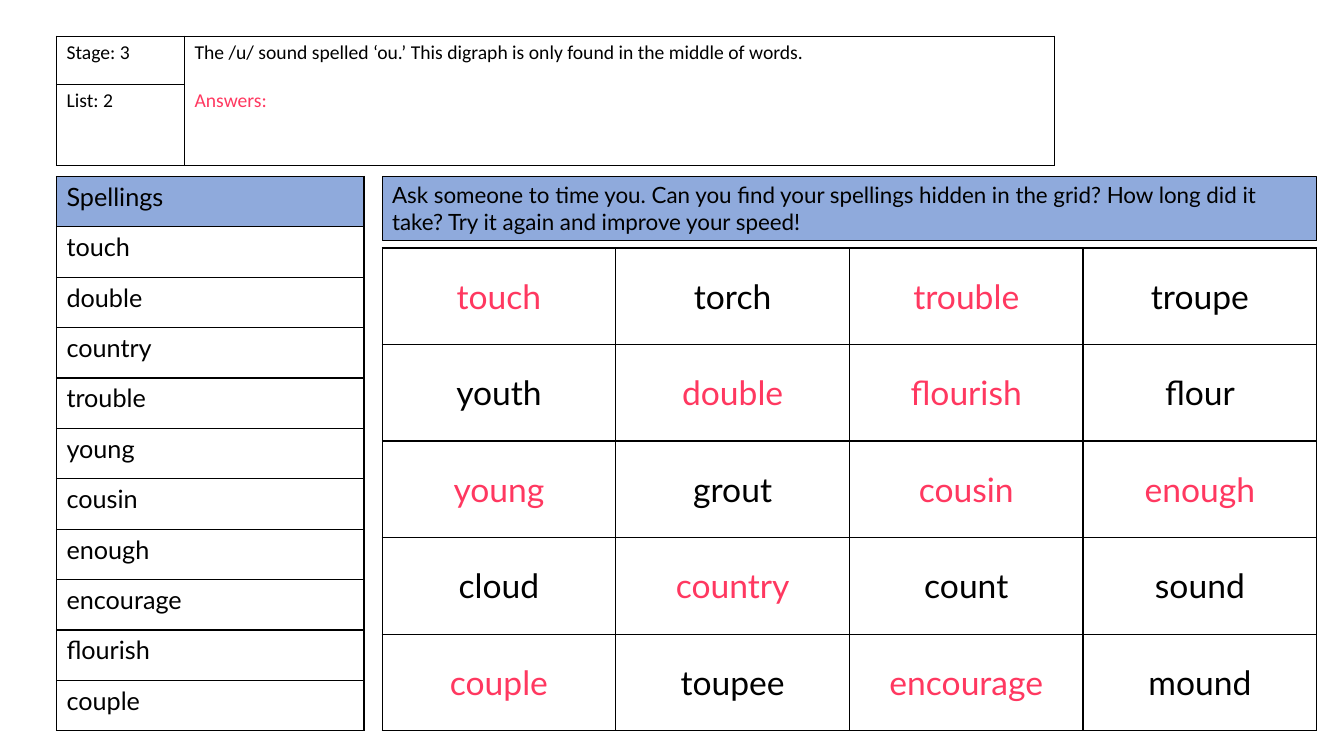
import pptx
import pptx.dml.color
import pptx.enum.shapes
import pptx.enum.text
import pptx.util
from lxml import etree
from pptx.oxml.ns import qn

BLACK = pptx.dml.color.RGBColor(0x00, 0x00, 0x00)
ANSWER = pptx.dml.color.RGBColor(0xFF, 0x38, 0x60)
HEADING = pptx.dml.color.RGBColor(0x8F, 0xAA, 0xDC)

STAGE, LIST = "Stage: 3", "List: 2"
RULE = "The /u/ sound spelled ‘ou.’ This digraph is only found in the middle of words."
TASK = ("Ask someone to time you. Can you find your spellings hidden in the grid? "
        "How long did it take? Try it again and improve your speed!")
SPELLINGS = ["touch", "double", "country", "trouble", "young", "cousin",
             "enough", "encourage", "flourish", "couple"]
GRID = [
    ["touch", "torch", "trouble", "troupe"],
    ["youth", "double", "flourish", "flour"],
    ["young", "grout", "cousin", "enough"],
    ["cloud", "country", "count", "sound"],
    ["couple", "toupee", "encourage", "mound"],
]

# Page grid, in inches
LEFT, TOP = 0.56, 0.36
BODY_TOP, BODY_H = 1.75, 5.5
LIST_W = 3.05
GRID_LEFT, GRID_W, GRID_H = 3.79, 9.27, 4.79
TASK_H = 0.64
HEADER_COLS, HEADER_H = [1.27, 8.63], 0.95

inch = pptx.util.Inches


def write(tf, text, size=18, font="Lato", color=BLACK, align=None, before=None, new=False):
    """Write text in the first paragraph of tf, or in a new one."""
    p = tf.add_paragraph() if new else tf.paragraphs[0]
    if align is not None:
        p.alignment = align
    if before is not None:
        p.space_before = pptx.util.Pt(before)
    r = p.add_run()
    r.text = text
    r.font.size = pptx.util.Pt(size)
    r.font.name = font
    r.font.color.rgb = color


def add_border(cell):
    tcPr = cell._tc.get_or_add_tcPr()
    for side in ("lnL", "lnR", "lnT", "lnB"):
        ln = etree.SubElement(tcPr, qn("a:" + side), w=str(pptx.util.Pt(1)))
        fill = etree.SubElement(ln, qn("a:solidFill"))
        etree.SubElement(fill, qn("a:srgbClr"), val=str(BLACK))


def add_table(slide, left, top, cols, rows, height):
    """Add a plain bordered table with the given column widths and equal rows."""
    table = slide.shapes.add_table(rows, len(cols), inch(left), inch(top),
                                   inch(sum(cols)), inch(height)).table
    table.first_row = table.horz_banding = False
    for column, width in zip(table.columns, cols):
        column.width = inch(width)
    for row in table.rows:
        row.height = inch(height / rows)
    for cell in table.iter_cells():
        add_border(cell)
        cell.fill.background()
    return table


def add_header(slide):
    table = add_table(slide, LEFT, TOP, HEADER_COLS, 2, HEADER_H)
    rule = table.cell(0, 1)
    rule.merge(table.cell(1, 1))
    style = dict(size=14, font="Calibri")
    write(table.cell(0, 0).text_frame, STAGE, **style)
    write(table.cell(1, 0).text_frame, LIST, **style)
    write(rule.text_frame, RULE, **style)
    write(rule.text_frame, "Answers:", color=ANSWER, before=17, new=True, **style)


def add_spellings(slide):
    lines = ["Spellings"] + SPELLINGS
    table = add_table(slide, LEFT, BODY_TOP, [LIST_W], len(lines), BODY_H)
    for cell, text in zip(table.iter_cells(), lines):
        write(cell.text_frame, text)
    heading = table.cell(0, 0)
    heading.fill.solid()
    heading.fill.fore_color.rgb = HEADING


def add_word_grid(slide):
    n = len(GRID[0])
    table = add_table(slide, GRID_LEFT, BODY_TOP + BODY_H - GRID_H,
                      [GRID_W / n] * n, len(GRID), GRID_H)
    for cell, word in zip(table.iter_cells(), sum(GRID, [])):
        cell.vertical_anchor = pptx.enum.text.MSO_ANCHOR.MIDDLE
        write(cell.text_frame, word, size=24, align=pptx.enum.text.PP_ALIGN.CENTER,
              color=ANSWER if word in SPELLINGS else BLACK)


def add_task(slide):
    sp = slide.shapes.add_shape(pptx.enum.shapes.MSO_SHAPE.RECTANGLE, inch(GRID_LEFT),
                                inch(BODY_TOP), inch(GRID_W), inch(TASK_H))
    sp.shadow.inherit = False
    sp.fill.solid()
    sp.fill.fore_color.rgb = HEADING
    sp.line.color.rgb = BLACK
    sp.line.width = pptx.util.Pt(0.75)
    tf = sp.text_frame
    tf.word_wrap = True
    tf.auto_size = pptx.enum.text.MSO_AUTO_SIZE.SHAPE_TO_FIT_TEXT
    tf.vertical_anchor = pptx.enum.text.MSO_ANCHOR.TOP
    write(tf, TASK, size=16, align=pptx.enum.text.PP_ALIGN.LEFT)


def main():
    prs = pptx.Presentation()
    prs.slide_width, prs.slide_height = inch(13.33), inch(7.5)
    slide = prs.slides.add_slide(prs.slide_layouts[6])
    add_spellings(slide)
    add_header(slide)
    add_word_grid(slide)
    add_task(slide)
    prs.save("out.pptx")


if __name__ == "__main__":
    main()
